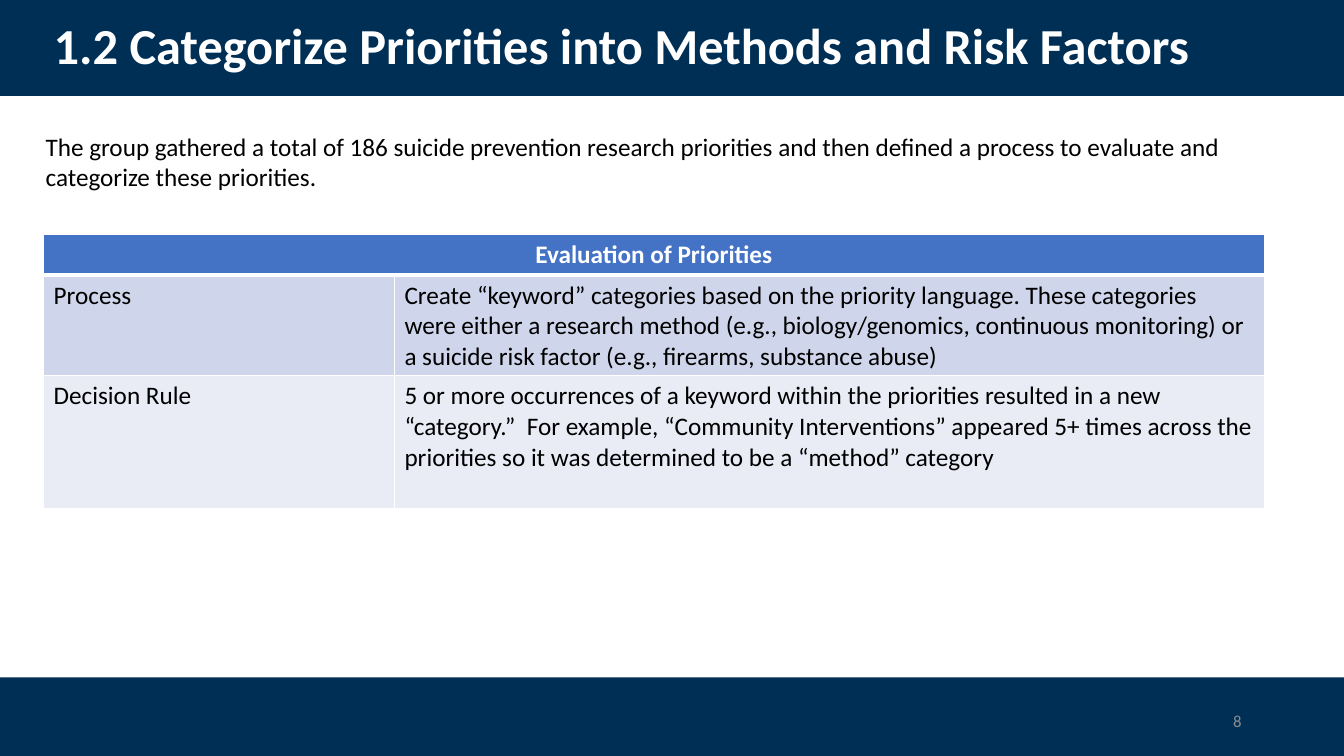
"""Builds the slide on sorting research priorities into methods and risk factors."""
import dataclasses

import lxml.etree
import pptx
import pptx.dml.color
import pptx.enum.shapes
import pptx.enum.text
import pptx.oxml.ns
import pptx.util

Cm = pptx.util.Cm
Align = pptx.enum.text.PP_ALIGN
Anchor = pptx.enum.text.MSO_ANCHOR


@dataclasses.dataclass(frozen=True)
class Theme:
    font: str = "Calibri"
    navy: str = "002F56"
    white: str = "FFFFFF"
    black: str = "000000"
    gray: str = "8C8C8C"
    header: str = "4472C4"
    bands: tuple = ("CFD5EA", "E9EBF5")
    title_size: int = 36
    body_size: int = 18
    number_size: int = 12
    thin: int = 1
    thick: int = 3


class SlideBuilder:
    def __init__(self, slide, theme):
        self.slide = slide
        self.theme = theme

    def paint(self, fill, color):
        fill.solid()
        fill.fore_color.rgb = pptx.dml.color.RGBColor.from_string(color)

    def set_text(self, frame, text, size, color, bold=False, align=Align.LEFT):
        frame.word_wrap = True
        para = frame.paragraphs[0]
        para.text = text
        para.alignment = align
        para.font.name = self.theme.font
        para.font.size = pptx.util.Pt(size)
        para.font.bold = bold
        para.font.color.rgb = pptx.dml.color.RGBColor.from_string(color)
        return para

    def band(self, left, top, width, height):
        shape = self.slide.shapes.add_shape(
            pptx.enum.shapes.MSO_SHAPE.RECTANGLE, left, top, width, height)
        shape.shadow.inherit = False
        self.paint(shape.fill, self.theme.navy)
        shape.line.fill.background()

    def title(self, text, left, top, width, height):
        title = self.slide.shapes.title
        title.left, title.top, title.width, title.height = left, top, width, height
        title.text_frame.vertical_anchor = Anchor.MIDDLE
        para = self.set_text(title.text_frame, text, self.theme.title_size,
                             self.theme.white, bold=True)
        para.line_spacing = 0.9
        self.slide.shapes.element.append(title.element)

    def text(self, text, left, top, width, height, size, color,
             align=Align.LEFT, anchor=Anchor.TOP):
        box = self.slide.shapes.add_textbox(left, top, width, height)
        box.text_frame.vertical_anchor = anchor
        self.set_text(box.text_frame, text, size, color, align=align)

    def border(self, cell, side, width):
        properties = cell._tc.get_or_add_tcPr()
        line = lxml.etree.SubElement(
            properties, pptx.oxml.ns.qn(f"a:ln{side}"), w=str(pptx.util.Pt(width)))
        solid = lxml.etree.SubElement(line, pptx.oxml.ns.qn("a:solidFill"))
        lxml.etree.SubElement(solid, pptx.oxml.ns.qn("a:srgbClr"), val=self.theme.white)

    def table(self, heading, rows, left, top, widths, heights):
        theme = self.theme
        table = self.slide.shapes.add_table(
            len(heights), len(widths), left, top, sum(widths), sum(heights)).table
        for column, width in zip(table.columns, widths):
            column.width = width
        for row, height in zip(table.rows, heights):
            row.height = height
        table.cell(0, 0).merge(table.cell(0, len(widths) - 1))

        fills = (theme.header, *theme.bands)
        for row_index, fill in enumerate(fills):
            for column_index in range(len(widths)):
                cell = table.cell(row_index, column_index)
                for side in "LRTB":
                    under_header = (row_index, side) in ((0, "B"), (1, "T"))
                    self.border(cell, side, theme.thick if under_header else theme.thin)
                self.paint(cell.fill, fill)

        self.set_text(table.cell(0, 0).text_frame, heading, theme.body_size,
                      theme.white, bold=True, align=Align.CENTER)
        for row_index, row in enumerate(rows, start=1):
            for column_index, text in enumerate(row):
                self.set_text(table.cell(row_index, column_index).text_frame, text,
                              theme.body_size, theme.black)


def main():
    deck = pptx.Presentation()
    deck.slide_width, deck.slide_height = Cm(33.87), Cm(19.05)
    theme = Theme()
    page = SlideBuilder(deck.slides.add_slide(deck.slide_layouts[5]), theme)

    page.band(0, 0, deck.slide_width, Cm(2.42))
    page.band(0, Cm(17.07), deck.slide_width, deck.slide_height - Cm(17.07))
    page.title("1.2 Categorize Priorities into Methods and Risk Factors",
               Cm(1.1), Cm(0.28), Cm(29.21), Cm(1.88))
    page.text("8", Cm(23.92), Cm(17.65), Cm(7.62), Cm(1.02),
              theme.number_size, theme.gray, Align.RIGHT, Anchor.MIDDLE)
    page.table(
        "Evaluation of Priorities",
        [
            ("Process",
             "Create “keyword” categories based on the priority language. These "
             "categories were either a research method (e.g., biology/genomics, "
             "continuous monitoring) or a suicide risk factor (e.g., firearms, "
             "substance abuse)"),
            ("Decision Rule",
             "5 or more occurrences of a keyword within the priorities resulted in "
             "a new “category.”  For example, “Community Interventions” appeared 5+ "
             "times across the priorities so it was determined to be a “method” "
             "category"),
        ],
        Cm(1.1), Cm(5.9), (Cm(8.84), Cm(21.92)), (Cm(1.03), Cm(2.54), Cm(3.35)))
    page.text("The group gathered a total of 186 suicide prevention research priorities "
              "and then defined a process to evaluate and categorize these priorities.",
              Cm(0.9), Cm(3.18), Cm(31.7), Cm(1.8), theme.body_size, theme.black)

    deck.save("out.pptx")


if __name__ == "__main__":
    main()
